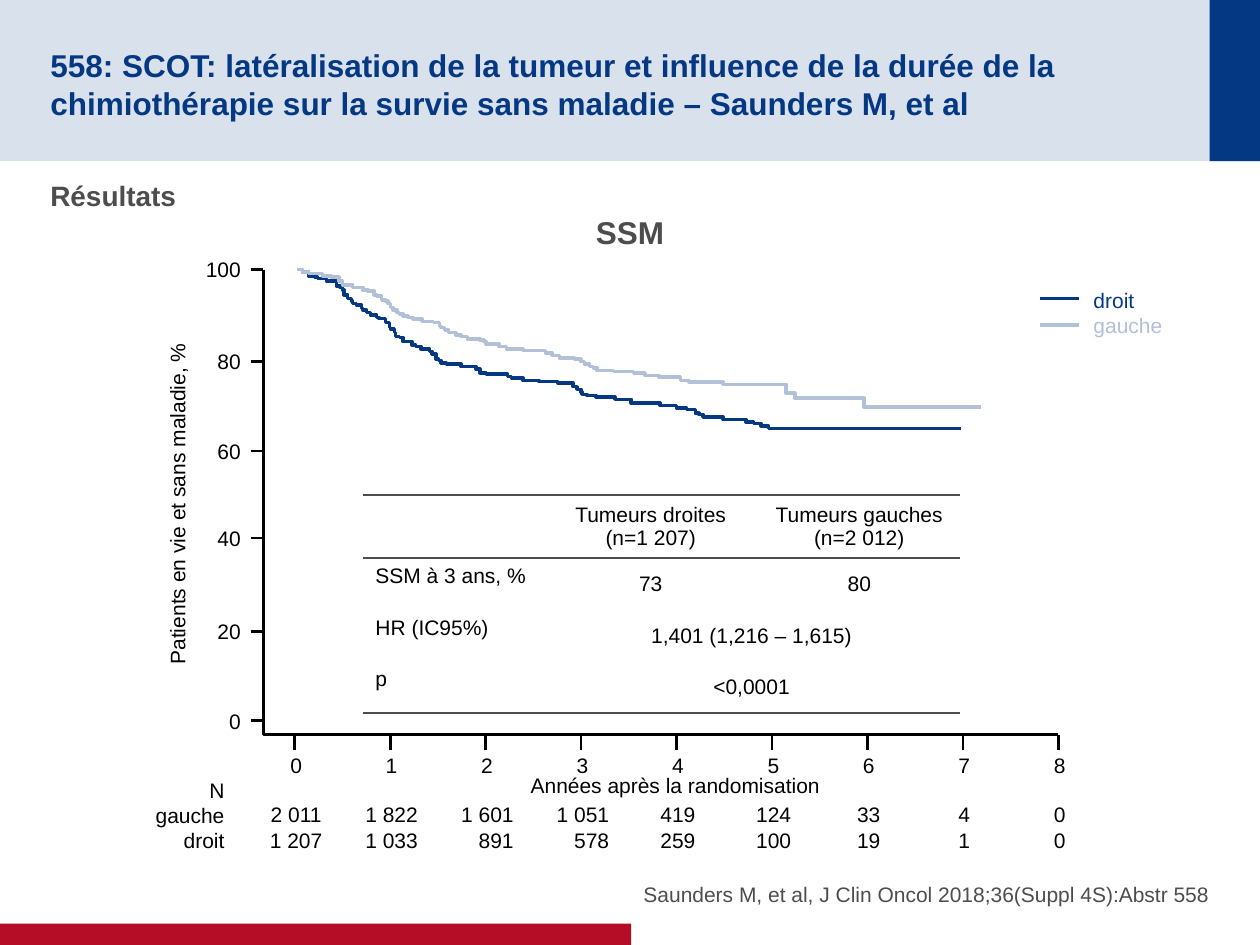
from dataclasses import dataclass

import pptx
import pptx.dml.color
import pptx.enum.shapes
import pptx.enum.text
import pptx.oxml
import pptx.oxml.ns
import pptx.util
from pptx.util import Cm, Pt

RGB = pptx.dml.color.RGBColor
NAVY = RGB(0x04, 0x38, 0x82)
PALE = RGB(0xB2, 0xC0, 0xD8)
RED = RGB(0xB6, 0x0D, 0x27)
GREY = RGB(0x4D, 0x4D, 0x4D)
BLACK = RGB(0, 0, 0)

ALIGN = pptx.enum.text.PP_ALIGN
ANCHOR = pptx.enum.text.MSO_ANCHOR
LEFT, CENTER, RIGHT = ALIGN.LEFT, ALIGN.CENTER, ALIGN.RIGHT
NS = pptx.oxml.ns.nsdecls("a")

AXIS_X, AXIS_Y, AXIS_TOP, AXIS_END = 2.09, 5.83, 2.14, 8.4
YEAR_0, YEAR_GAP = 2.34, 0.7575


@dataclass
class Curve:
    """Survival steps in hundredths of an inch: at x, drop to y."""
    name: str
    color: RGB
    legend_y: float
    end: int
    steps: list[tuple[int, int]]


@dataclass
class AtRisk:
    left_n: str
    right_n: str
    width: float
    align: ALIGN = CENTER


CURVES = [
    Curve("droit", NAVY, 2.37, 763, [
        (240, 216), (245, 219), (250, 220), (252, 221), (259, 223), (267, 227), (270, 228),
        (272, 230), (273, 234), (276, 237), (279, 239), (280, 241), (283, 242), (287, 245),
        (288, 246), (291, 248), (294, 250), (299, 252), (301, 253), (306, 256), (309, 260),
        (310, 261), (313, 264), (314, 267), (317, 268), (320, 271), (327, 274), (330, 275),
        (334, 277), (341, 279), (343, 281), (346, 285), (348, 286), (350, 288), (354, 289),
        (366, 291), (378, 293), (381, 296), (386, 297), (403, 299), (406, 300), (415, 302),
        (428, 303), (443, 304), (455, 307), (458, 309), (461, 311), (462, 313), (466, 314),
        (473, 315), (488, 317), (501, 320), (524, 322), (537, 324), (545, 325), (552, 328),
        (555, 329), (558, 331), (574, 333), (592, 335), (598, 336), (604, 338), (610, 340)]),
    Curve("gauche", PALE, 2.58, 779, [
        (240, 216), (245, 217), (256, 219), (263, 220), (269, 223), (272, 226), (280, 228),
        (288, 230), (292, 231), (297, 234), (299, 235), (303, 238), (306, 239), (308, 241),
        (310, 244), (312, 246), (315, 248), (317, 249), (320, 251), (324, 252), (328, 253),
        (335, 255), (344, 256), (349, 259), (350, 260), (353, 262), (356, 264), (362, 266),
        (366, 267), (371, 269), (381, 270), (384, 271), (386, 273), (396, 275), (402, 277),
        (415, 278), (433, 280), (438, 282), (444, 284), (456, 285), (461, 287), (464, 289),
        (468, 291), (471, 292), (474, 294), (487, 295), (503, 296), (512, 298), (523, 299),
        (540, 302), (547, 303), (574, 305), (624, 312), (631, 316), (686, 323)]),
]
AT_RISK = [
    AtRisk("2 011", "1 207", 0.62), AtRisk("1 822", "1 033", 0.62),
    AtRisk("1 601", "891", 0.62, RIGHT), AtRisk("1 051", "578", 0.62, RIGHT),
    AtRisk("419", "259", 0.48), AtRisk("124", "100", 0.48, RIGHT),
    AtRisk("33", "19", 0.39), AtRisk("4", "1", 0.29), AtRisk("0", "0", 0.29),
]
Y_TICKS = {100: 2.14, 80: 2.87, 60: 3.58, 40: 4.27, 20: 5.01, 0: 5.72}
TABLE = [
    ["", "Tumeurs droites\v(n=1 207)", "Tumeurs gauches\v(n=2 012)"],
    ["SSM à 3 ans, %", "73", "80"],
    ["HR (IC95%)", "1,401 (1,216 – 1,615)"],
    ["p", "<0,0001"],
]


def inch(value: float) -> int:
    return Cm(2.54 * value)


def style(p, size: float, color: RGB, align=LEFT, bold=False) -> None:
    p.alignment = align
    f = p.font
    f.name, f.size, f.bold = "Arial", Pt(size), bold
    f.color.rgb = color


def text(s, box, lines, size=12, color=BLACK, align=LEFT, bold=False,
         anchor=ANCHOR.TOP, wrap=False, inset=None):
    """Adds a text box; inset is left, top, right, bottom."""
    sp = s.shapes.add_textbox(*map(inch, box))
    tf = sp.text_frame
    tf.word_wrap, tf.vertical_anchor = wrap, anchor
    if inset:
        tf.margin_left, tf.margin_top, tf.margin_right, tf.margin_bottom = map(inch, inset)
    tf.text = "\n".join(lines)
    for p in tf.paragraphs:
        style(p, size, color, align, bold)
    return sp


def rect(s, box, color: RGB):
    sp = s.shapes.add_shape(pptx.enum.shapes.MSO_SHAPE.RECTANGLE, *map(inch, box))
    sp.shadow.inherit = False
    sp.fill.solid()
    sp.fill.fore_color.rgb = color
    sp.line.fill.background()
    return sp


def line(s, x1, y1, x2, y2, color: RGB, width: float) -> None:
    kind = pptx.enum.shapes.MSO_CONNECTOR.STRAIGHT
    c = s.shapes.add_connector(kind, *map(inch, (x1, y1, x2, y2)))
    c.line.color.rgb, c.line.width = color, Pt(width)
    c._element.spPr.append(pptx.oxml.parse_xml(f"<a:effectLst {NS}/>"))


def polyline(s, points, color: RGB, width: float) -> None:
    """Draws an open path through points in hundredths of an inch."""
    fb = s.shapes.build_freeform(*points[0], scale=inch(0.01))
    fb.add_line_segments(points[1:], close=False)
    sp = fb.convert_to_shape()
    sp.shadow.inherit = False
    sp.fill.background()
    sp.line.color.rgb, sp.line.width = color, Pt(width)


def draw_curve(s, curve: Curve) -> None:
    points = [(236, 214)]
    for x, y in curve.steps:
        points += [(x, points[-1][1]), (x, y)]
    polyline(s, points + [(curve.end, points[-1][1])], curve.color, 2)
    line(s, 8.25, curve.legend_y, 8.56, curve.legend_y, curve.color, 2)


def draw_axes(s) -> None:
    corners = [(AXIS_X, AXIS_TOP), (AXIS_X, AXIS_Y), (AXIS_END, AXIS_Y)]
    polyline(s, [(round(x * 100), round(y * 100)) for x, y in corners], BLACK, 1.5)
    for value, y in Y_TICKS.items():
        line(s, AXIS_X - 0.1, y, AXIS_X, y, BLACK, 1.5)
        text(s, (1.53, y - 0.15, 0.48, 0.3), [str(value)], align=RIGHT, anchor=ANCHOR.MIDDLE)
    for year, n in enumerate(AT_RISK):
        x = YEAR_0 + year * YEAR_GAP
        line(s, x, AXIS_Y, x, AXIS_Y + 0.12, BLACK, 1.5)
        sp = text(s, (x + 0.01 - n.width / 2, 5.92, n.width, 0.91),
                  [str(year), n.left_n, n.right_n], align=CENTER)
        first, *counts = sp.text_frame.paragraphs
        counts[0].space_before = Pt(14)
        for p in counts:
            p.alignment = n.align
    text(s, (-0.03, 3.85, 2.87, 0.3), ["Patients en vie et sans maladie, %"],
         align=CENTER).rotation = 270
    text(s, (4.05, 6.08, 2.62, 0.3), ["Années après la randomisation"], align=CENTER)
    text(s, (0.46, 6.12, 1.42, 0.71), ["N", "gauche", "droit"], align=RIGHT, wrap=True)


def border(cell, sides) -> None:
    """Sets top and bottom borders: grey for the sides named, none otherwise."""
    tcPr = cell._tc.get_or_add_tcPr()
    for i, side in enumerate(("lnL", "lnR", "lnT", "lnB")):
        fill = (f'<a:solidFill><a:srgbClr val="{GREY}"/></a:solidFill>'
                if side in sides else "<a:noFill/>")
        tcPr.insert(i, pptx.oxml.parse_xml(f'<a:{side} {NS} w="12700">{fill}</a:{side}>'))


def draw_table(s) -> None:
    t = s.shapes.add_table(4, 3, *map(inch, (2.88, 3.93, 4.74, 1.72))).table
    t.first_row = t.horz_banding = False
    for col, width in zip(t.columns, (1.43, 1.71, 1.6)):
        col.width = inch(width)
    for row, height in zip(t.rows, (0.5, 0.41, 0.41, 0.41)):
        row.height = inch(height)
    sides = [("lnT", "lnB"), ("lnT",), (), ("lnB",)]
    for r, values in enumerate(TABLE):
        for c in range(3):
            cell = t.cell(r, c)
            cell.fill.background()
            border(cell, sides[r])
        if len(values) == 2:
            t.cell(r, 1).merge(t.cell(r, 2))
        for c, value in enumerate(values):
            cell = t.cell(r, c)
            cell.text = value
            cell.vertical_anchor = ANCHOR.MIDDLE if c else ANCHOR.TOP
            style(cell.text_frame.paragraphs[0], 12, BLACK, CENTER if c else LEFT)


def main() -> None:
    prs = pptx.Presentation()
    prs.slide_width, prs.slide_height = inch(10), inch(7.5)
    s = prs.slides.add_slide(prs.slide_layouts[6])

    band = rect(s, (0, 0, 10, 1.28), NAVY)
    band.fill._xPr.solidFill[0].append(pptx.oxml.parse_xml(f'<a:alpha {NS} val="15000"/>'))
    rect(s, (9.6, 0, 0.4, 1.28), NAVY)
    rect(s, (0, 7.33, 5.01, 0.17), RED)
    text(s, (0.4, 0.2, 9.01, 0.88),
         ["558: SCOT: latéralisation de la tumeur et influence de la durée de la "
          "chimiothérapie sur la survie sans maladie – Saunders M, et al"],
         18, NAVY, bold=True, anchor=ANCHOR.MIDDLE, wrap=True, inset=(0, 0.05, 0, 0))
    text(s, (0.4, 1.37, 9.2, 5.19), ["Résultats"], 16, GREY, bold=True, wrap=True,
         inset=(0, 0.05, 0, 0.05))
    text(s, (5.08, 6.67, 4.52, 0.53),
         ["Saunders M, et al, J Clin Oncol 2018;36(Suppl 4S):Abstr 558"],
         12, GREY, RIGHT, anchor=ANCHOR.BOTTOM, wrap=True, inset=(0, 0, 0, 0))
    text(s, (1.72, 1.64, 6.56, 0.4), ["SSM"], 18, GREY, CENTER, bold=True, wrap=True)

    draw_table(s)
    draw_axes(s)
    legend = text(s, (8.58, 2.23, 0.75, 0.5), [c.name for c in CURVES])
    for p, curve in zip(legend.text_frame.paragraphs, CURVES):
        p.font.color.rgb = curve.color
    for curve in CURVES:
        draw_curve(s, curve)
    prs.save("out.pptx")


if __name__ == "__main__":
    main()
